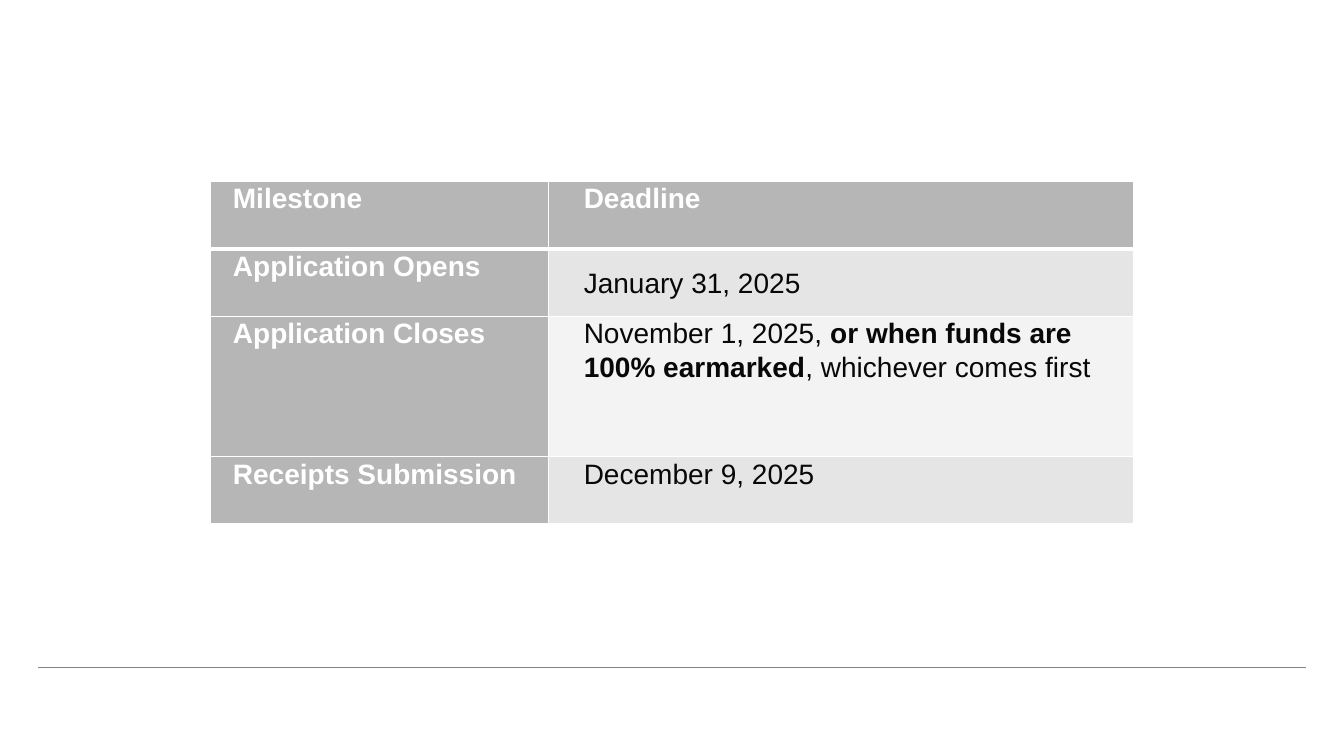
import pptx
import pptx.util
import pptx.dml.color
import pptx.enum.shapes
import pptx.enum.text
import pptx.oxml
import pptx.oxml.ns
from pptx.util import Inches

COLORS = {"white": "FFFFFF", "ink": "080808", "head": "B6B6B6",
          "band": "E5E5E5", "pale": "F3F3F3", "rule": "808486"}
WIDTHS = [3.35, 5.8]
HEIGHTS = [0.67, 0.67, 1.39, 0.67]
# Each cell is a list of (text, bold) runs
ROWS = [
    [[("Milestone", True)], [("Deadline", True)]],
    [[("Application Opens", True)], [("January 31, 2025", False)]],
    [[("Application Closes", True)],
     [("November 1, 2025, ", False),
      ("or when funds are 100% earmarked", True),
      (", whichever comes first", False)]],
    [[("Receipts Submission", True)], [("December 9, 2025", False)]],
]


def color(name):
    return pptx.dml.color.RGBColor.from_string(COLORS[name])


def add_text(para, text, size=20, bold=False, tint="ink", face="Arial"):
    run = para.add_run()
    run.text = text
    font = run.font
    font.size = pptx.util.Pt(size)
    font.bold = bold
    font.name = face
    font.color.rgb = color(tint)


def set_indent(para, left, first):
    props = para._p.get_or_add_pPr()
    props.set("marL", str(Inches(left)))
    props.set("indent", str(Inches(first)))


def set_edges(cell, top=1, base=1):
    props = cell._tc.get_or_add_tcPr()
    edges = [("L", 1), ("R", 1), ("T", top), ("B", base)]
    for spot, (side, width) in enumerate(edges):
        edge = pptx.oxml.parse_xml(
            f'<a:ln{side} {pptx.oxml.ns.nsdecls("a")} w="{pptx.util.Pt(width)}">'
            f'<a:solidFill><a:srgbClr val="{COLORS["white"]}"/></a:solidFill>'
            f'</a:ln{side}>')
        props.insert(spot, edge)


def fill_cell(cell, runs, row, col):
    head = row == 0 or col == 0
    shade = "head" if head else "band" if row % 2 else "pale"
    cell.fill.solid()
    cell.fill.fore_color.rgb = color(shade)
    cell.margin_left = cell.margin_right = Inches(0.07)
    cell.margin_top = cell.margin_bottom = 0
    middle = (row, col) == (1, 1)
    anchor = pptx.enum.text.MSO_ANCHOR
    cell.vertical_anchor = anchor.MIDDLE if middle else anchor.TOP
    para = cell.text_frame.paragraphs[0]
    set_indent(para, *((0.28, 0) if col else (0.49, -0.34)))
    para.line_spacing = 1.07
    for text, bold in runs:
        add_text(para, text, bold=bold, tint="white" if head else "ink")
    # A thick edge parts the header from the body
    set_edges(cell, top=3 if row == 1 else 1, base=3 if row == 0 else 1)


def add_grid(slide, left, top):
    frame = slide.shapes.add_table(
        len(ROWS), len(WIDTHS), Inches(left), Inches(top),
        Inches(sum(WIDTHS)), Inches(sum(HEIGHTS)))
    table = frame.table
    for col, width in enumerate(WIDTHS):
        table.columns[col].width = Inches(width)
    for row, cells in enumerate(ROWS):
        table.rows[row].height = Inches(HEIGHTS[row])
        for col, runs in enumerate(cells):
            fill_cell(table.cell(row, col), runs, row, col)


def add_rule(slide, left, right, top):
    rule = slide.shapes.add_connector(
        pptx.enum.shapes.MSO_CONNECTOR.STRAIGHT,
        Inches(left), Inches(top), Inches(right), Inches(top))
    rule.line.color.rgb = color("rule")
    rule.line.width = pptx.util.Pt(0.25)
    rule._element.spPr.append(pptx.oxml.parse_xml(
        f'<a:effectLst {pptx.oxml.ns.nsdecls("a")}/>'))


def main():
    deck = pptx.Presentation()
    deck.slide_width = Inches(13.33)
    deck.slide_height = Inches(7.5)
    slide = deck.slides.add_slide(deck.slide_layouts[6])
    # Footer rule
    add_rule(slide, 0.38, 12.95, 6.62)
    # Deadline table
    add_grid(slide, 2.09, 1.8)
    deck.save("out.pptx")


if __name__ == "__main__":
    main()
